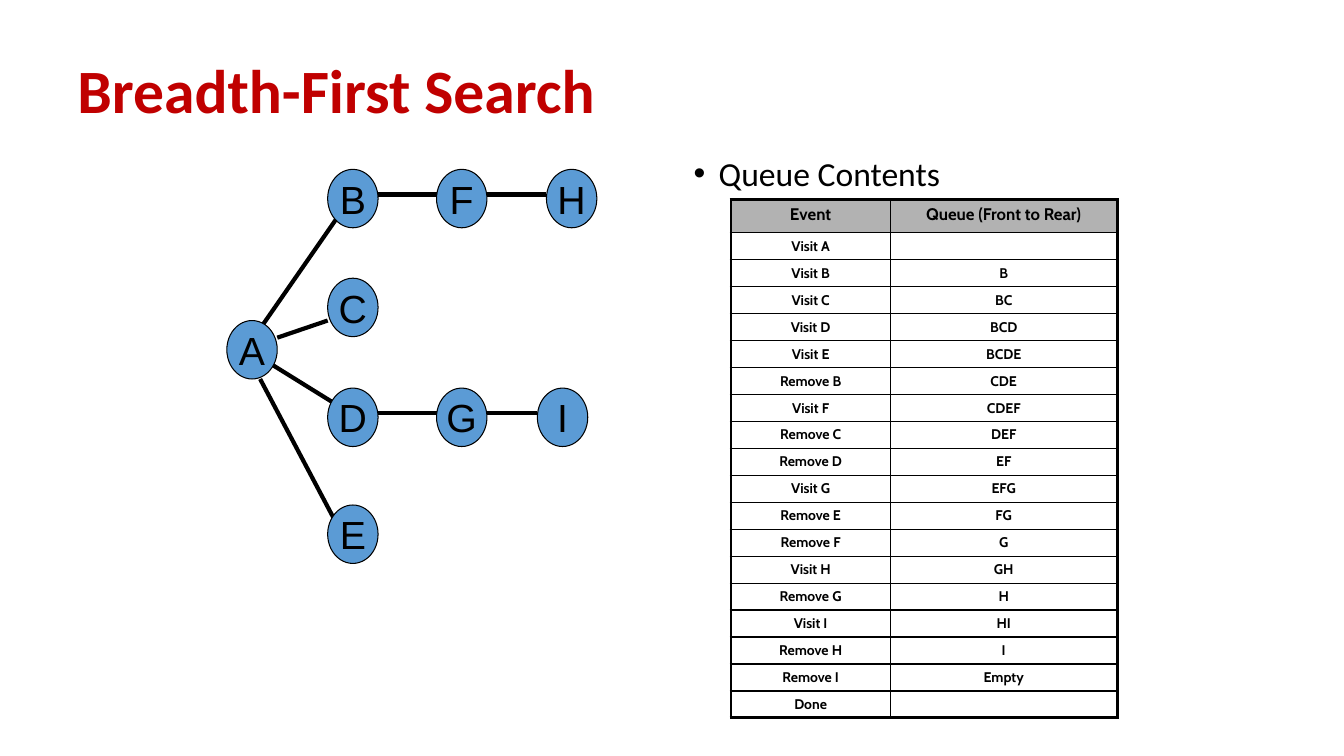
"""Build the breadth-first search slide: a graph beside its queue table."""
from pptx import Presentation, util as u
from pptx.dml.color import RGBColor
from pptx.enum import shapes, text
from pptx.oxml.ns import qn
from lxml import etree

TITLE = "Breadth-First Search"
HEADING = "Queue Contents"
NODES = {
    "A": (2.25, 3.18), "B": (3.25, 1.68), "C": (3.25, 2.76),
    "F": (4.33, 1.68), "H": (5.42, 1.68), "I": (5.33, 3.85),
    "G": (4.33, 3.85), "D": (3.25, 3.85), "E": (3.25, 5.01),
}
EDGES = [
    (2.58, 3.26, 3.33, 2.18), (3.75, 1.93, 4.33, 1.93),
    (4.83, 1.93, 5.42, 1.93), (2.75, 3.35, 3.25, 3.18),
    (2.67, 3.6, 3.33, 4.01), (3.75, 4.1, 4.33, 4.1),
    (4.83, 4.1, 5.33, 4.1), (2.58, 3.76, 3.33, 5.18),
]
QUEUE = [
    ("Event", "Queue (Front to Rear)"),
    ("Visit A", ""), ("Visit B", "B"), ("Visit C", "BC"),
    ("Visit D", "BCD"), ("Visit E", "BCDE"), ("Remove B", "CDE"),
    ("Visit F", "CDEF"), ("Remove C", "DEF"), ("Remove D", "EF"),
    ("Visit G", "EFG"), ("Remove E", "FG"), ("Remove F", "G"),
    ("Visit H", "GH"), ("Remove G", "H"), ("Visit I", "HI"),
    ("Remove H", "I"), ("Remove I", "Empty"), ("Done", ""),
]
COLUMNS = (1.58, 2.25)
HEADER_HEIGHT, TABLE_HEIGHT = 0.33, 5.13
BLACK, RED, BLUE, GRAY = "000000", "C00000", "5B9BD5", "B2B2B2"


def color(value):
    return RGBColor.from_string(value)


def inches(*lengths):
    return [u.Inches(length) for length in lengths]


def style(paragraph, face, size, ink=BLACK, bold=False):
    font = paragraph.font
    font.name, font.size, font.bold = face, u.Pt(size), bold
    font.color.rgb = color(ink)


def add_text(slide, place, words, size, ink=BLACK, bold=False):
    frame = slide.shapes.add_textbox(*inches(*place)).text_frame
    frame.word_wrap = True
    paragraph = frame.paragraphs[0]
    paragraph.text = words
    paragraph.line_spacing = 0.9
    style(paragraph, "Calibri", size, ink, bold)
    return frame


def add_edge(slide, ends):
    edge = slide.shapes.add_connector(shapes.MSO_CONNECTOR.STRAIGHT, *inches(*ends))
    edge.line.color.rgb = color(BLACK)
    edge.line.width = u.Pt(3)
    etree.SubElement(edge._element.spPr, qn("a:effectLst"))


def add_node(slide, letter, corner):
    node = slide.shapes.add_shape(
        shapes.MSO_SHAPE.OVAL, *inches(*corner, 0.5, 0.58))
    node.shadow.inherit = False
    node.fill.solid()
    node.fill.fore_color.rgb = color(BLUE)
    node.line.color.rgb = color(BLACK)
    node.line.width = u.Pt(0.75)
    frame = node.text_frame
    frame.word_wrap = False
    frame.vertical_anchor = text.MSO_ANCHOR.MIDDLE
    label = frame.paragraphs[0]
    label.text = letter
    label.alignment = text.PP_ALIGN.CENTER
    style(label, "Arial", 28)


def add_border(cell, side, points):
    border = etree.Element(qn(f"a:{side}"), w=str(u.Pt(points)))
    fill = etree.SubElement(border, qn("a:solidFill"))
    etree.SubElement(fill, qn("a:srgbClr"), val=BLACK)
    return border


def fill_cell(cell, words, row, column):
    size = 10 if row else 12
    entry = cell.text_frame.paragraphs[0]
    entry.text = words
    entry.alignment = text.PP_ALIGN.CENTER
    style(entry, "Cabin", size, bold=True)
    if not words:
        etree.SubElement(entry._p, qn("a:endParaRPr"), sz=str(size * 100))
    if row:
        cell.fill.background()
    else:
        cell.fill.solid()
        cell.fill.fore_color.rgb = color(GRAY)
    outer = {"lnL": column == 0, "lnR": column == len(COLUMNS) - 1,
             "lnT": row == 0, "lnB": row == len(QUEUE) - 1}
    properties = cell._tc.get_or_add_tcPr()
    for position, (side, edge) in enumerate(outer.items()):
        properties.insert(position, add_border(cell, side, 2.25 if edge else 1))


def add_queue(slide):
    queue = slide.shapes.add_table(
        len(QUEUE), len(COLUMNS),
        *inches(7.25, 1.98, sum(COLUMNS), TABLE_HEIGHT)).table
    queue.first_row = queue.horz_banding = False
    for column, width in enumerate(COLUMNS):
        queue.columns[column].width = u.Inches(width)
    step = (TABLE_HEIGHT - HEADER_HEIGHT) / (len(QUEUE) - 1)
    for row, entries in enumerate(QUEUE):
        queue.rows[row].height = u.Inches(step if row else HEADER_HEIGHT)
        for column, words in enumerate(entries):
            fill_cell(queue.cell(row, column), words, row, column)


def add_heading(slide):
    frame = add_text(slide, (6.78, 1.51, 5.89, 4.95), HEADING, 24)
    heading = frame.paragraphs[0]
    heading.space_before = u.Pt(10)
    properties = heading._p.get_or_add_pPr()
    properties.set("marL", str(u.Inches(0.25)))
    properties.set("indent", str(u.Inches(-0.25)))
    bullet_font = etree.Element(qn("a:buFont"), typeface="Arial")
    bullet = etree.Element(qn("a:buChar"), char="•")
    defaults = properties.find(qn("a:defRPr"))
    defaults.addprevious(bullet_font)
    defaults.addprevious(bullet)


def main():
    deck = Presentation()
    deck.slide_width, deck.slide_height = inches(13.33, 7.5)
    slide = deck.slides.add_slide(deck.slide_layouts[6])
    for ends in EDGES:
        add_edge(slide, ends)
    title = add_text(slide, (0.67, 0.3, 12, 1.25), TITLE, 44, RED, True)
    title.vertical_anchor = text.MSO_ANCHOR.MIDDLE
    add_queue(slide)
    add_heading(slide)
    for letter, corner in NODES.items():
        add_node(slide, letter, corner)
    deck.save("out.pptx")


if __name__ == "__main__":
    main()
